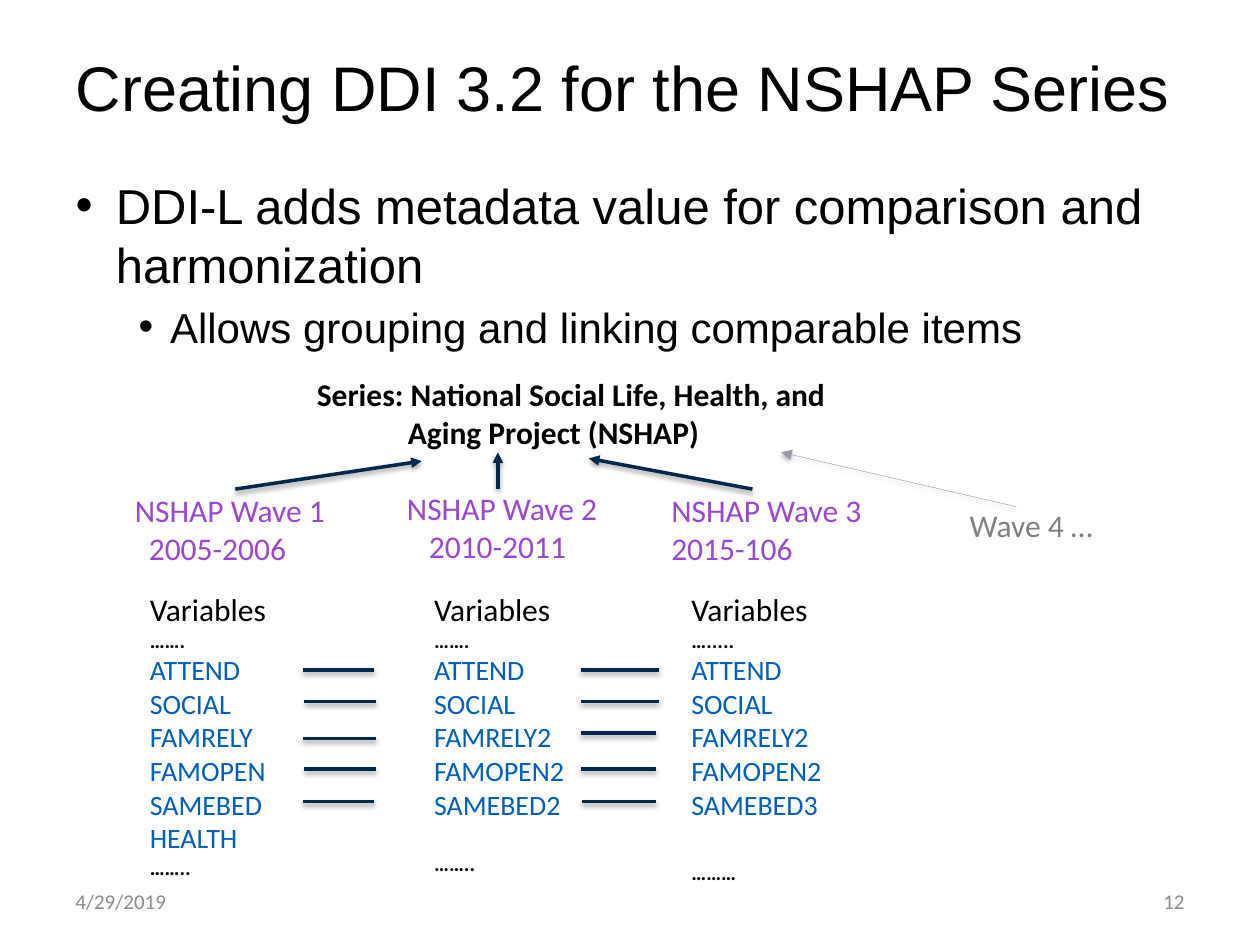
from dataclasses import dataclass

from lxml.etree import SubElement
from pptx import Presentation
from pptx.dml.color import RGBColor
from pptx.enum.shapes import MSO_CONNECTOR
from pptx.enum.text import MSO_ANCHOR, PP_ALIGN
from pptx.oxml.ns import qn
from pptx.util import Pt


@dataclass(frozen=True)
class Theme:
    black: str = "000000"
    navy: str = "00274C"
    purple: str = "9B48D0"
    blue: str = "005FB8"
    gray: str = "808080"
    pale: str = "9F95A9"
    muted: str = "8C8C8C"
    head: str = "Arial"
    text: str = "Calibri"
    title: int = 36
    list: int = 28
    sub: int = 24
    label: int = 18
    item: int = 16
    small: int = 12


class Deck:
    def __init__(self, theme):
        self.theme = theme
        self.file = Presentation()
        self.file.slide_width, self.file.slide_height = Pt(720), Pt(540)
        self.slide = self.file.slides.add_slide(self.file.slide_layouts[1])

    def place(self, shape, box):
        shape.left, shape.top, shape.width, shape.height = map(Pt, box)
        frame = shape.text_frame
        frame.word_wrap = True
        frame.vertical_anchor = MSO_ANCHOR.TOP
        return frame

    def indent(self, para, left, first):
        props = para._p.get_or_add_pPr()
        props.set("marL", str(Pt(left)))
        props.set("indent", str(Pt(first)))
        return props

    def run(self, para, text, size, color, font=None, bold=False):
        run = para.add_run()
        run.text = text
        run.font.name = font or self.theme.text
        run.font.size = Pt(size)
        run.font.bold = bold
        run.font.color.rgb = RGBColor.from_string(color)

    def title(self, text, box):
        para = self.place(self.slide.shapes.title, box).paragraphs[0]
        para.alignment = PP_ALIGN.LEFT
        self.run(para, text, self.theme.title, self.theme.black, self.theme.head)

    def bullets(self, rows, box):
        """Fill the body; each row is text, size, left indent, hang and space before."""
        frame = self.place(self.slide.placeholders[1], box)
        for level, (text, size, left, hang, gap) in enumerate(rows):
            para = frame.add_paragraph() if level else frame.paragraphs[0]
            para.level = level
            props = self.indent(para, left, -hang)
            SubElement(props, qn("a:buFont"), typeface=self.theme.head)
            SubElement(props, qn("a:buChar"), char="•")
            para.space_before = Pt(gap)
            self.run(para, text, size, self.theme.black, self.theme.head)

    def label(self, box, lines, color, size=None, align=PP_ALIGN.LEFT, bold=False,
              left=0, hang=0, anchor=MSO_ANCHOR.TOP):
        """Write lines of one style; left shifts every line but the first, or its wrap."""
        frame = self.place(self.slide.shapes.add_textbox(0, 0, 0, 0), box)
        frame.vertical_anchor = anchor
        for row, text in enumerate(lines):
            para = frame.add_paragraph() if row else frame.paragraphs[0]
            para.alignment = align
            if hang or row:
                self.indent(para, left, -hang)
            self.run(para, text, size or self.theme.label, color, bold=bold)

    def column(self, box, dots, names, end, gap):
        """List variables between dotted lines; gap parts the last dots from the names."""
        t = self.theme
        rows = [("Variables", t.label, t.black, False), (dots, t.small, t.black, True)]
        rows += [(name, t.item, t.blue, False) for name in names]
        rows.append((end, t.small, t.black, True))
        frame = self.place(self.slide.shapes.add_textbox(0, 0, 0, 0), box)
        for row, (text, size, color, bold) in enumerate(rows):
            para = frame.add_paragraph() if row else frame.paragraphs[0]
            self.run(para, text, size, color, bold=bold)
        para.space_before = Pt(gap)

    def line(self, start, end, color=None, width=2, arrow=False):
        link = self.slide.shapes.add_connector(
            MSO_CONNECTOR.STRAIGHT, *map(Pt, (*start, *end)))
        link.line.color.rgb = RGBColor.from_string(color or self.theme.navy)
        link.line.width = Pt(width)
        if arrow:
            SubElement(link.line._get_or_add_ln(), qn("a:tailEnd"), type="triangle")
        effect = SubElement(link._element.spPr, qn("a:effectLst"))
        shade = SubElement(effect, qn("a:outerShdw"), blurRad=str(Pt(3.1)),
                           dist=str(Pt(1.6)), dir="5400000", rotWithShape="0")
        tint = SubElement(shade, qn("a:srgbClr"), val=self.theme.black)
        SubElement(tint, qn("a:alpha"), val="38000")


def main():
    t = Theme()
    deck = Deck(t)
    deck.title("Creating DDI 3.2 for the NSHAP Series", (36, 24, 648, 70))
    deck.bullets([
        ("DDI-L adds metadata value for comparison and harmonization", t.list, 23, 23, 0),
        ("Allows grouping and linking comparable items", t.sub, 54, 18, 4.8),
    ], (36, 96.5, 648, 373.5))

    deck.label((174, 211, 310.5, 51),
               ["Series: National Social Life, Health, and Aging Project (NSHAP)"],
               t.black, bold=True, left=52, hang=52)
    waves = [
        ((70, 277, 125, 51), ["NSHAP Wave 1", "2005-2006"], t.purple, 8),
        ((225.5, 276, 136, 51), ["NSHAP Wave 2", "2010-2011"], t.purple, 12.5),
        ((376.5, 277, 146, 51), ["NSHAP Wave 3", "2015-106"], t.purple, 0),
        ((547, 285.5, 102, 29), ["Wave 4 …"], t.gray, 0),
    ]
    for box, lines, color, left in waves:
        deck.label(box, lines, color, left=left)

    for start, end in [((134.5, 279.5), (241, 263.5)), ((284.5, 279.5), (284.5, 258.5)),
                       ((430, 279.5), (336.5, 262))]:
        deck.line(start, end, arrow=True)
    deck.line((580.5, 289.5), (446.5, 258.5), t.pale, 0.25, arrow=True)

    shared = ["ATTEND", "SOCIAL"]
    deck.column((78.5, 333.5, 82, 174), "…….",
                shared + ["FAMRELY", "FAMOPEN", "SAMEBED", "HEALTH"], "……..", 0)
    deck.column((241, 333.5, 92, 172), "…….",
                shared + ["FAMRELY2", "FAMOPEN2", "SAMEBED2"], "……..", 17)
    deck.column((388, 333.5, 91, 177), "….....",
                shared + ["FAMRELY2", "FAMOPEN2", "SAMEBED3"], "………", 22)

    first = [(173, 214, 383), (174, 215, 401), (173, 215, 422),
             (174, 215, 439.5), (173, 214, 458)]
    second = [(332, 376.5, 383), (332, 376.5, 401), (332, 375, 419),
              (332, 375, 439.5), (332.5, 375, 458)]
    for left, right, y in first + second:
        deck.line((left, y), (right, y))

    for x, text, align in [(36, "4/29/2019", PP_ALIGN.LEFT), (516, "12", PP_ALIGN.RIGHT)]:
        deck.label((x, 500.5, 168, 28.5), [text], t.muted, t.small, align,
                   anchor=MSO_ANCHOR.MIDDLE)
    deck.file.save("out.pptx")


if __name__ == "__main__":
    main()
